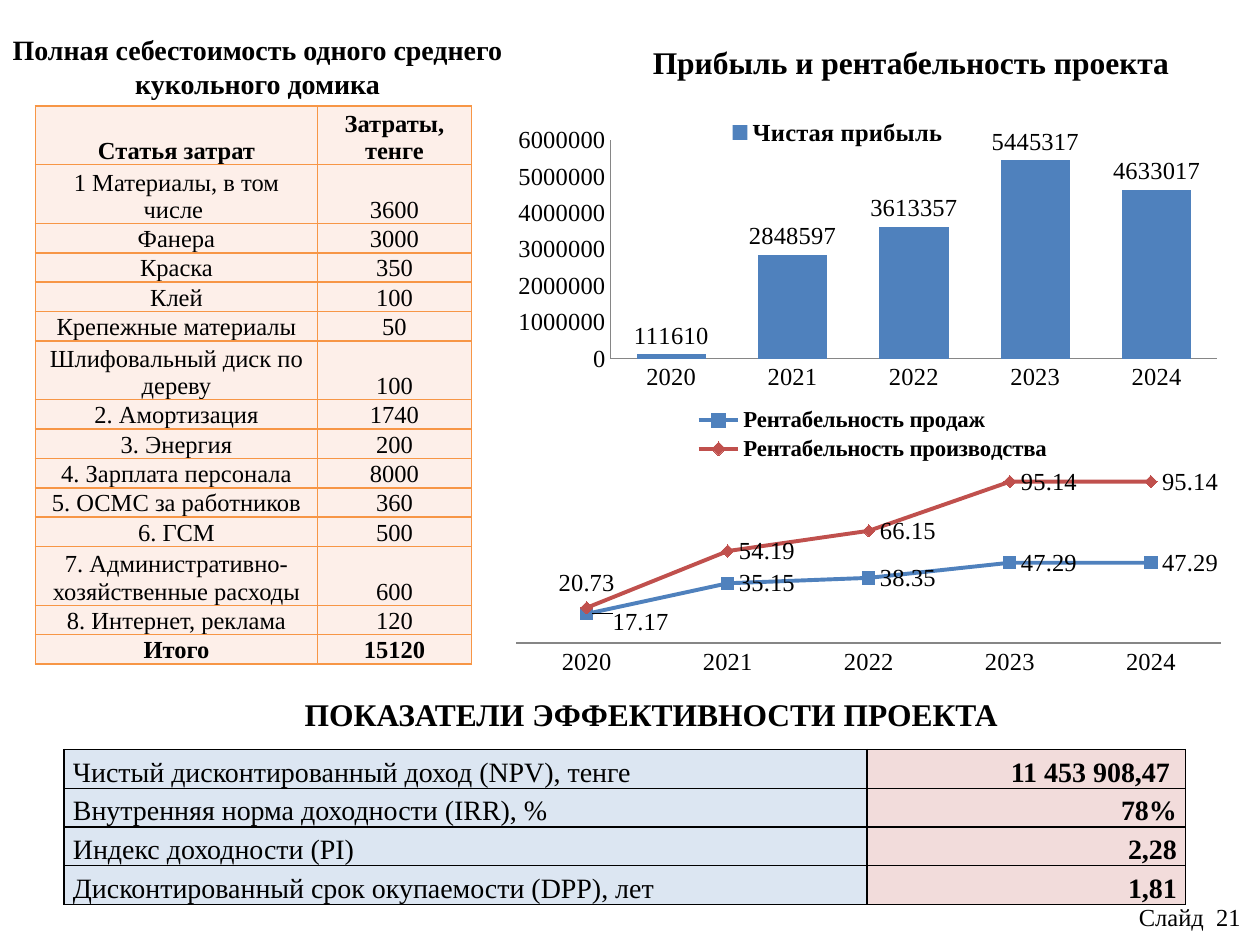
"""Build the slide on cost, profit and efficiency of the doll house project."""
from lxml import etree
from pptx import Presentation
from pptx import util as u
from pptx.chart.data import CategoryChartData
from pptx.dml.color import RGBColor
from pptx.enum import chart as charts, text
from pptx.oxml import parse_xml
from pptx.oxml.ns import nsdecls, qn

FONT = "Times New Roman"
COLORS = {"black": "000000", "orange": "F79646", "cream": "FDEFE9", "ice": "DCE6F2",
          "rose": "F2DCDB", "blue": "4F81BD", "red": "C0504D", "axis": "868686"}
LEFT, CENTER, RIGHT = text.PP_ALIGN.LEFT, text.PP_ALIGN.CENTER, text.PP_ALIGN.RIGHT


def format_text(paragraph, size, bold, align):
    paragraph.alignment = align
    for run in paragraph.runs:
        run.font.name, run.font.size, run.font.bold = FONT, u.Pt(size), bold
        run.font.color.rgb = RGBColor.from_string(COLORS["black"])


def make_layout(**values):
    layout = parse_xml(f'<c:layout {nsdecls("c")}><c:manualLayout/></c:layout>')
    for name, value in values.items():
        etree.SubElement(layout[0], qn(f"c:{name}")).set("val", str(value))
    return layout


presentation = Presentation()
presentation.slide_width, presentation.slide_height = u.Pt(720), u.Pt(540)
slide = presentation.slides.add_slide(presentation.slide_layouts[5])

headings = [
    ("Прибыль и рентабельность проекта", 365.8, 20.9, 312.5, 29, 18, True, LEFT),
    ("Полная себестоимость одного среднего кукольного домика", -2.9, 15.1, 300.2, 46, 16, True, CENTER),
    ("ПОКАЗАТЕЛИ ЭФФЕКТИВНОСТИ ПРОЕКТА", 167, 393.8, 414.7, 29, 18, True, LEFT),
    ("Слайд  21", 643.7, 511.9, 73.4, 24.5, 14, False, LEFT),
]
for index, (wording, left, top, width, height, size, bold, align) in enumerate(headings):
    box = [u.Pt(value) for value in (left, top, width, height)]
    shape = slide.shapes.add_textbox(*box) if index else slide.shapes.title
    shape.left, shape.top, shape.width, shape.height = box
    frame = shape.text_frame
    frame.text = wording
    frame.word_wrap = align == CENTER
    frame.auto_size = text.MSO_AUTO_SIZE.NONE
    frame.vertical_anchor = text.MSO_ANCHOR.TOP
    format_text(frame.paragraphs[0], size, bold, align)

costs = [
    ("Статья затрат", "Затраты, тенге"), ("1 Материалы, в том числе ", "3600"),
    ("Фанера", "3000"), ("Краска", "350"), ("Клей", "100"), ("Крепежные материалы", "50"),
    ("Шлифовальный диск по дереву", "100"), ("2. Амортизация", "1740"), ("3. Энергия", "200"),
    ("4. Зарплата персонала", "8000"), ("5. ОСМС за работников", "360"), ("6. ГСМ", "500"),
    ("7. Административно-хозяйственные расходы", "600"), ("8. Интернет, реклама", "120"),
    ("Итого", "15120"),
]
indicators = [
    ("Чистый дисконтированный доход (NPV), тенге", "11 453 908,47 "),
    ("Внутренняя норма доходности (IRR), %", "78%"),
    ("Индекс доходности (PI)", "2,28"),
    ("Дисконтированный срок окупаемости (DPP), лет", "1,81"),
]
tables = [
    dict(rows=costs, left=20.2, top=60.5, widths=(161.3, 87.8), height=16.8, double=(0, 1, 6, 12),
         border="orange", fills=("cream", "cream"), aligns=(CENTER, CENTER), size=14, spacing=1,
         bold=lambda row, column: row in (0, 14)),
    dict(rows=indicators, left=36.7, top=428.4, widths=(458.6, 182.2), height=22.1, double=(),
         border="black", fills=("ice", "rose"), aligns=(LEFT, RIGHT), size=16, spacing=1.15,
         bold=lambda row, column: column == 1),
]
for item in tables:
    rows = item["rows"]
    table = slide.shapes.add_table(len(rows), 2, u.Pt(item["left"]), u.Pt(item["top"]),
                                   u.Pt(sum(item["widths"])), u.Pt(item["height"] * len(rows))).table
    table.first_row = table.horz_banding = False
    for column, width in enumerate(item["widths"]):
        table.columns[column].width = u.Pt(width)
    for row, wording in enumerate(rows):
        table.rows[row].height = u.Pt(item["height"] * (2 if row in item["double"] else 1))
        for column in range(2):
            cell = table.cell(row, column)
            cell.text = wording[column]
            cell.margin_left = cell.margin_right = u.Pt(5)
            cell.margin_top = cell.margin_bottom = 0
            cell.vertical_anchor = text.MSO_ANCHOR.BOTTOM
            paragraph = cell.text_frame.paragraphs[0]
            paragraph.line_spacing = item["spacing"]
            format_text(paragraph, item["size"], item["bold"](row, column), item["aligns"][column])
            for side in ("lnL", "lnR", "lnT", "lnB"):
                cell._tc.get_or_add_tcPr().append(parse_xml(
                    f'<a:{side} {nsdecls("a")} w="12700"><a:solidFill>'
                    f'<a:srgbClr val="{COLORS[item["border"]]}"/></a:solidFill></a:{side}>'))
            cell.fill.solid()
            cell.fill.fore_color.rgb = RGBColor.from_string(COLORS[item["fills"][column]])

plots = [
    dict(type=charts.XL_CHART_TYPE.COLUMN_CLUSTERED, box=(280.8, 54.7, 425.5, 175.7),
         series={"Чистая прибыль": (111610, 2848597, 3613357, 5445317, 4633017)},
         maximum=6000000, legend_size=14, position=charts.XL_LABEL_POSITION.OUTSIDE_END,
         inner=dict(x=0.16, y=0.145, w=0.815, h=0.71), key=dict(x=0.31, y=0.07, w=0.31, h=0.1)),
    dict(type=charts.XL_CHART_TYPE.LINE_MARKERS, box=(286.6, 224.6, 419.8, 164.2),
         series={"Рентабельность продаж": (17.17, 35.15, 38.35, 47.29, 47.29),
                 "Рентабельность производства": (20.73, 54.19, 66.15, 95.14, 95.14)},
         maximum=100, legend_size=13, position=charts.XL_LABEL_POSITION.RIGHT,
         inner=dict(x=0.02, y=0.28, w=0.96, h=0.59), key=dict(x=0.26, y=0.04, w=0.49, h=0.21)),
]
markers = (charts.XL_MARKER_STYLE.SQUARE, charts.XL_MARKER_STYLE.DIAMOND)
for item in plots:
    data = CategoryChartData()
    data.categories = ["2020", "2021", "2022", "2023", "2024"]
    for name, values in item["series"].items():
        data.add_series(name, values)
    chart = slide.shapes.add_chart(item["type"], *map(u.Pt, item["box"]), data).chart
    is_line = item["type"] == charts.XL_CHART_TYPE.LINE_MARKERS
    chart.has_title = False
    chart.font.name, chart.font.size = FONT, u.Pt(14)
    chart.font.color.rgb = RGBColor.from_string(COLORS["black"])
    chart.has_legend = True
    legend = chart.legend
    legend.position = charts.XL_LEGEND_POSITION.TOP
    legend.include_in_layout = False
    legend.font.name, legend.font.size, legend.font.bold = FONT, u.Pt(item["legend_size"]), True
    for old in legend._element.findall(qn("c:layout")):
        legend._element.remove(old)
    legend._element.find(qn("c:legendPos")).addnext(
        make_layout(xMode="edge", yMode="edge", **item["key"]))
    area = chart._chartSpace.chart.plotArea
    for old in area.findall(qn("c:layout")):
        area.remove(old)
    area.insert(0, make_layout(layoutTarget="inner", xMode="edge", yMode="edge", **item["inner"]))
    for axis in (chart.category_axis, chart.value_axis):
        axis.major_tick_mark = axis.minor_tick_mark = charts.XL_TICK_MARK.NONE
        axis.has_major_gridlines = False
        axis.format.line.color.rgb = RGBColor.from_string(COLORS["axis"])
    chart.value_axis.minimum_scale, chart.value_axis.maximum_scale = 0, item["maximum"]
    chart.value_axis.visible = not is_line
    plot = chart.plots[0]
    plot.vary_by_categories = False
    if not is_line:
        plot.gap_width = 75
    for series, color, marker in zip(plot.series, ("blue", "red"), markers):
        labels = series.data_labels
        labels.show_value = True
        labels.position = item["position"]
        fills = [series.format.fill]
        if is_line:
            series.smooth = False
            series.format.line.width = u.Pt(2.25)
            series.format.line.color.rgb = RGBColor.from_string(COLORS[color])
            series.marker.style, series.marker.size = marker, 7
            series.marker.format.line.color.rgb = RGBColor.from_string(COLORS[color])
            fills = [series.marker.format.fill]
        for fill in fills:
            fill.solid()
            fill.fore_color.rgb = RGBColor.from_string(COLORS[color])
    if is_line:
        lower, upper = plot.series
        upper.points[0].data_label.position = charts.XL_LABEL_POSITION.ABOVE
        lower.points[0].data_label.position = charts.XL_LABEL_POSITION.RIGHT
        label = lower._element.find(".//" + qn("c:dLbl"))
        label.find(qn("c:idx")).addnext(make_layout(x=0.02, y=0.03))

presentation.save("out.pptx")
